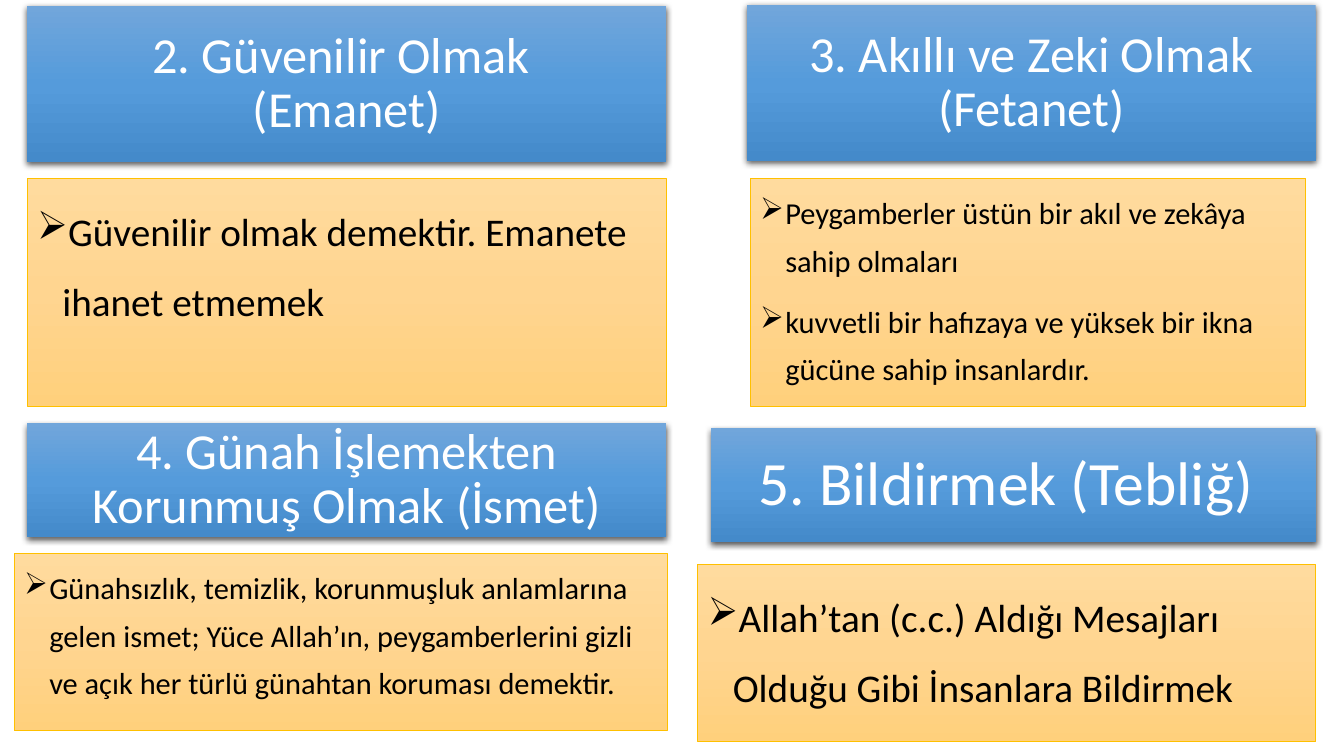
from copy import deepcopy
from dataclasses import dataclass

from lxml.etree import SubElement
from pptx import Presentation
from pptx.dml.color import RGBColor
from pptx.enum.shapes import MSO_SHAPE as Preset
from pptx.enum.text import MSO_ANCHOR as Anchor, PP_ALIGN as Align
from pptx.oxml.ns import qn
from pptx.shapes.autoshape import Shape
from pptx.slide import Slide
from pptx.text.text import _Paragraph as Paragraph
from pptx.util import Emu, Inches, Pt

BLUE = ("71A6DB", "559BDB", "448ACA")
AMBER = ("FFDB9E", "FFD590", "FFD07C")
GOLD = "FFC000"
INDENT = Inches(0.25)


@dataclass(frozen=True)
class Box:
    left: float
    top: float
    width: float
    height: float


@dataclass(frozen=True)
class Heading:
    box: Box
    text: str
    size: float = 36


@dataclass(frozen=True)
class Explanation:
    box: Box
    items: tuple[str, ...]
    size: float
    line_spacing: float


@dataclass(frozen=True)
class Quality:
    heading: Heading
    explanation: Explanation


QUALITIES = (
    Quality(
        Heading(Box(0.27, 0.06, 6.34, 1.55), "2. Güvenilir Olmak \n(Emanet)"),
        Explanation(
            Box(0.27, 1.77, 6.34, 2.26),
            ("Güvenilir olmak demektir. Emanete ihanet etmemek",),
            28, 1.5,
        ),
    ),
    Quality(
        Heading(Box(7.41, 0.05, 5.64, 1.55), "3. Akıllı ve Zeki Olmak (Fetanet)"),
        Explanation(
            Box(7.44, 1.77, 5.51, 2.26),
            (
                "Peygamberler üstün bir akıl ve zekâya sahip olmaları",
                "kuvvetli bir hafızaya ve yüksek bir ikna gücüne sahip insanlardır.",
            ),
            21.7, 1.3,
        ),
    ),
    Quality(
        Heading(Box(0.27, 4.2, 6.34, 1.13), "4. Günah İşlemekten Korunmuş Olmak (İsmet)"),
        Explanation(
            Box(0.14, 5.49, 6.48, 1.76),
            (
                "Günahsızlık, temizlik, korunmuşluk anlamlarına gelen ismet; "
                "Yüce Allah’ın, peygamberlerini gizli ve açık her türlü "
                "günahtan koruması demektir.",
            ),
            21.7, 1.3,
        ),
    ),
    Quality(
        Heading(Box(7.05, 4.25, 6, 1.13), "5. Bildirmek (Tebliğ) ", 44),
        Explanation(
            Box(6.92, 5.6, 6.13, 1.76),
            ("Allah’tan (c.c.) Aldığı Mesajları Olduğu Gibi İnsanlara Bildirmek",),
            28, 1.5,
        ),
    ),
)


def color(value: str) -> RGBColor:
    return RGBColor.from_string(value)


def apply_format(target: object, values: dict[str, object]) -> None:
    for name, value in values.items():
        setattr(target, name, value)


def fill_gradient(shape: Shape, colors: tuple[str, ...]) -> None:
    shape.fill.gradient()
    shape.fill.gradient_angle = 270
    stop_list = shape._element.spPr.find(".//" + qn("a:gsLst"))
    stop_list.append(deepcopy(stop_list[0]))
    for index, stop in enumerate(shape.fill.gradient_stops):
        stop.position = index / (len(colors) - 1)
        stop.color.rgb = color(colors[index])


def add_panel(slide: Slide, box: Box, colors: tuple[str, ...], anchor: Anchor) -> Shape:
    shape = slide.shapes.add_shape(
        Preset.RECTANGLE,
        Inches(box.left), Inches(box.top), Inches(box.width), Inches(box.height),
    )
    fill_gradient(shape, colors)
    shape.shadow.inherit = False
    apply_format(shape.text_frame, {"word_wrap": True, "vertical_anchor": anchor})
    return shape


def write_text(paragraph: Paragraph, text: str, size: float, text_color: str,
               values: dict[str, object]) -> None:
    paragraph.text = text
    apply_format(paragraph, values)
    for run in paragraph.runs:
        apply_format(run.font, {"name": "Calibri", "size": Pt(size)})
        run.font.color.rgb = color(text_color)


def add_shadow(shape: Shape) -> None:
    effects = shape._element.spPr.find(qn("a:effectLst"))
    shadow = SubElement(effects, qn("a:outerShdw"), {
        "blurRad": str(Pt(4.5)), "dist": str(Pt(1.5)), "dir": "5400000",
        "algn": "ctr", "rotWithShape": "0",
    })
    tint = SubElement(shadow, qn("a:srgbClr"), {"val": "000000"})
    SubElement(tint, qn("a:alpha"), {"val": "63000"})


def add_bullet(paragraph: Paragraph, indent: Emu) -> None:
    properties = paragraph._p.get_or_add_pPr()
    apply_indent = {"marL": indent, "indent": -indent}
    for name, value in apply_indent.items():
        properties.set(name, str(value))
    SubElement(properties, qn("a:buChar"), {"char": "➢"})


def draw_heading(slide: Slide, heading: Heading) -> None:
    shape = add_panel(slide, heading.box, BLUE, Anchor.MIDDLE)
    shape.line.fill.background()
    add_shadow(shape)
    write_text(shape.text_frame.paragraphs[0], heading.text, heading.size, "FFFFFF",
               {"alignment": Align.CENTER, "line_spacing": 0.9})


def draw_explanation(slide: Slide, explanation: Explanation) -> None:
    shape = add_panel(slide, explanation.box, AMBER, Anchor.TOP)
    shape.line.color.rgb = color(GOLD)
    shape.line.width = Pt(0.5)
    frame = shape.text_frame
    for index, item in enumerate(explanation.items):
        paragraph = frame.add_paragraph() if index else frame.paragraphs[0]
        write_text(paragraph, item, explanation.size, "000000", {
            "alignment": Align.LEFT,
            "line_spacing": explanation.line_spacing,
            "space_before": Pt(10),
        })
        add_bullet(paragraph, INDENT)


def main() -> None:
    presentation = Presentation()
    apply_format(presentation, {"slide_width": Inches(13.33), "slide_height": Inches(7.5)})
    slide = presentation.slides.add_slide(presentation.slide_layouts[6])
    for quality in QUALITIES:
        draw_heading(slide, quality.heading)
        draw_explanation(slide, quality.explanation)
    presentation.save("out.pptx")


if __name__ == "__main__":
    main()
